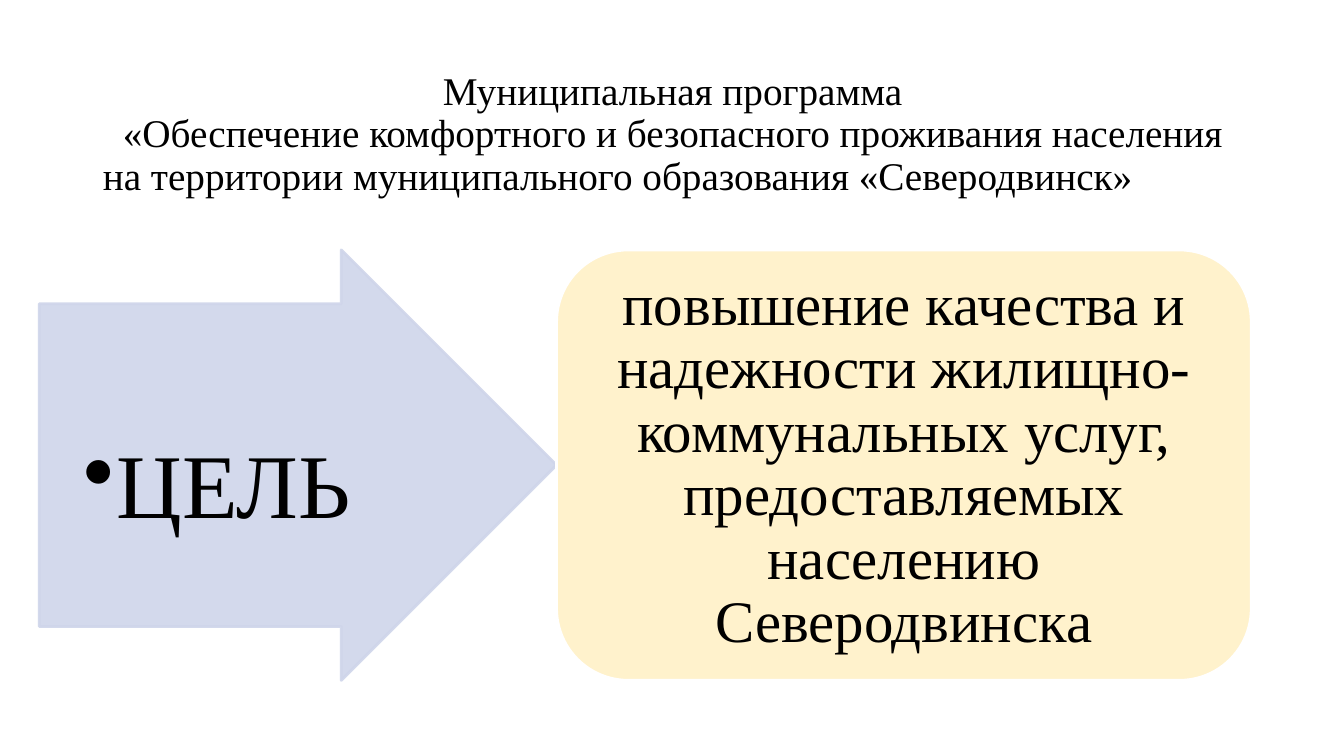
from lxml import etree
from pptx import Presentation
from pptx.dml.color import RGBColor
from pptx.enum.shapes import MSO_SHAPE
from pptx.enum.text import MSO_ANCHOR, MSO_AUTO_SIZE, PP_ALIGN
from pptx.oxml.ns import qn
from pptx.util import Inches, Pt

BLACK = RGBColor(0, 0, 0)
WHITE = RGBColor(0xFF, 0xFF, 0xFF)
BLUE = RGBColor(0xCF, 0xD5, 0xEA)
CREAM = RGBColor(0xFF, 0xF2, 0xCC)
ARROW, ROUND = MSO_SHAPE.RIGHT_ARROW, MSO_SHAPE.ROUNDED_RECTANGLE
TOP, MIDDLE = MSO_ANCHOR.TOP, MSO_ANCHOR.MIDDLE
LEFT, CENTER = PP_ALIGN.LEFT, PP_ALIGN.CENTER
FONT = "Times New Roman"


def write(shape, text, size, aligns=(CENTER,), anchor=MIDDLE,
          insets=(0.1, 0.05, 0.1, 0.05), bullet=None):
    """Fill a shape with text; aligns holds one value per paragraph."""
    frame = shape.text_frame
    frame.auto_size = MSO_AUTO_SIZE.NONE
    frame.word_wrap = True
    frame.vertical_anchor = anchor
    (frame.margin_left, frame.margin_top,
     frame.margin_right, frame.margin_bottom) = map(Inches, insets)
    frame.text = text
    for para, align in zip(frame.paragraphs, aligns):
        if bullet:
            props = para._p.get_or_add_pPr()
            props.set("marL", str(Inches(0.31)))
            props.set("indent", str(-Inches(0.31)))
            etree.SubElement(props, qn("a:buChar")).set("char", bullet)
        para.alignment = align
        para.line_spacing = 0.9
        para.space_before = Pt(0)
        for run in para.runs:
            run.font.size = Pt(size)
            run.font.name = FONT
            run.font.color.rgb = BLACK


def block(kind, left, width, fill, line):
    shape = slide.shapes.add_shape(
        kind, Inches(left), Inches(2.48), Inches(width), Inches(4.27))
    shape.shadow.inherit = False
    shape.fill.solid()
    shape.fill.fore_color.rgb = fill
    shape.line.color.rgb = line
    shape.line.width = Pt(2)
    return shape


deck = Presentation()
deck.slide_width, deck.slide_height = Inches(13.33), Inches(7.5)
slide = deck.slides.add_slide(deck.slide_layouts[5])

title = slide.shapes.title
title.left, title.top = Inches(0.92), Inches(-0.22)
title.width, title.height = Inches(11.5), Inches(3.12)
write(title,
      "Муниципальная программа\v"
      "«Обеспечение комфортного и безопасного проживания населения\n"
      "на территории муниципального образования «Северодвинск»",
      28, aligns=(CENTER, LEFT))

arrow = block(ARROW, 0.39, 5.13, BLUE, BLUE)
arrow.adjustments[0], arrow.adjustments[1] = 0.75, 0.5
for color in arrow._element.spPr.iter(qn("a:srgbClr")):
    etree.SubElement(color, qn("a:alpha")).set("val", "90000")

label = slide.shapes.add_textbox(
    Inches(0.39), Inches(3.02), Inches(3.53), Inches(3.2))
write(label, "ЦЕЛЬ", 65, anchor=TOP, insets=(0.05, 1.34, 0.05, 0.05), bullet="•")

goal = block(ROUND, 5.52, 6.89, CREAM, WHITE)
write(goal,
      "повышение качества и надежности жилищно-коммунальных услуг, "
      "предоставляемых населению Северодвинска",
      42, insets=(0.17, 0.09, 0.17, 0.09))

deck.save("out.pptx")
